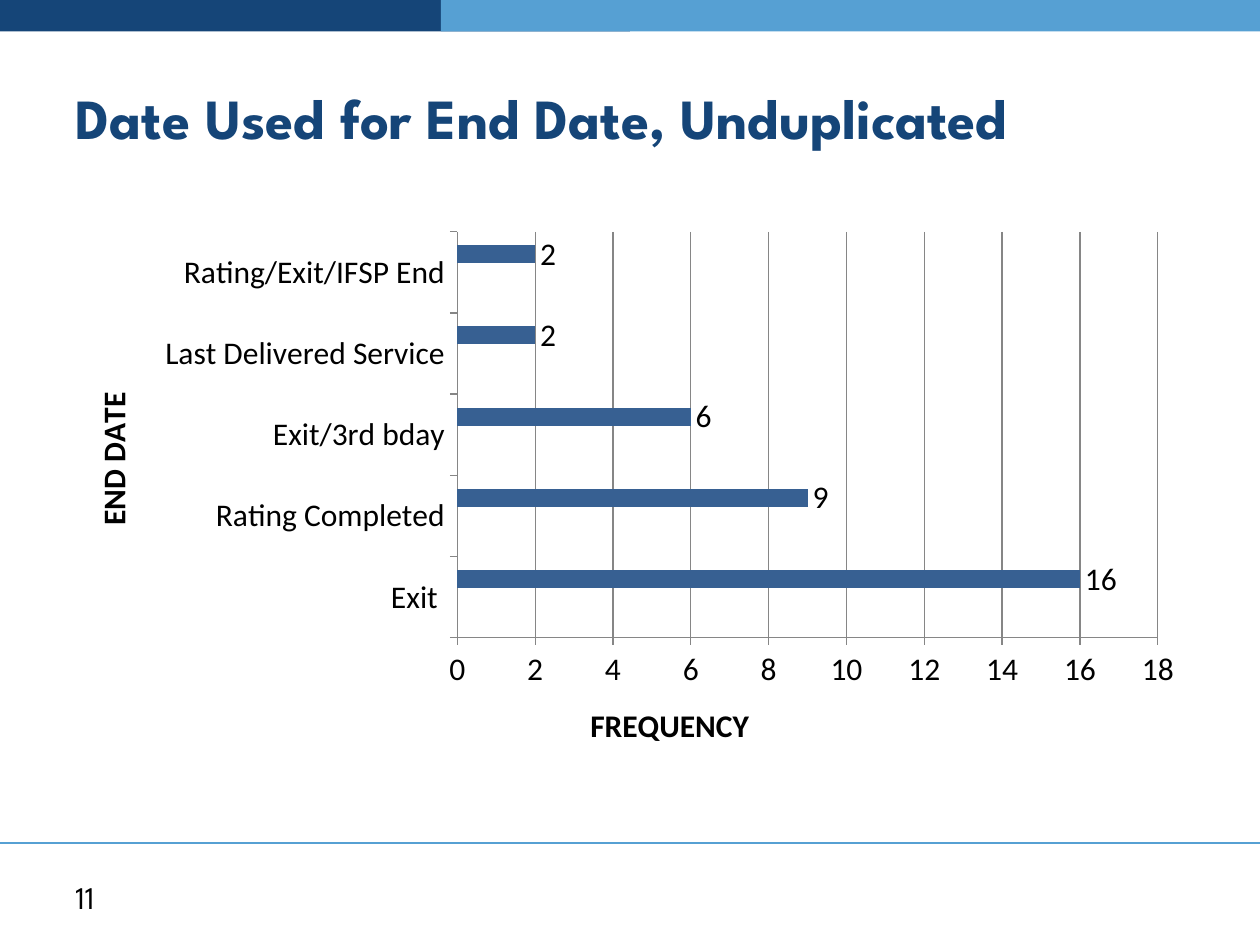
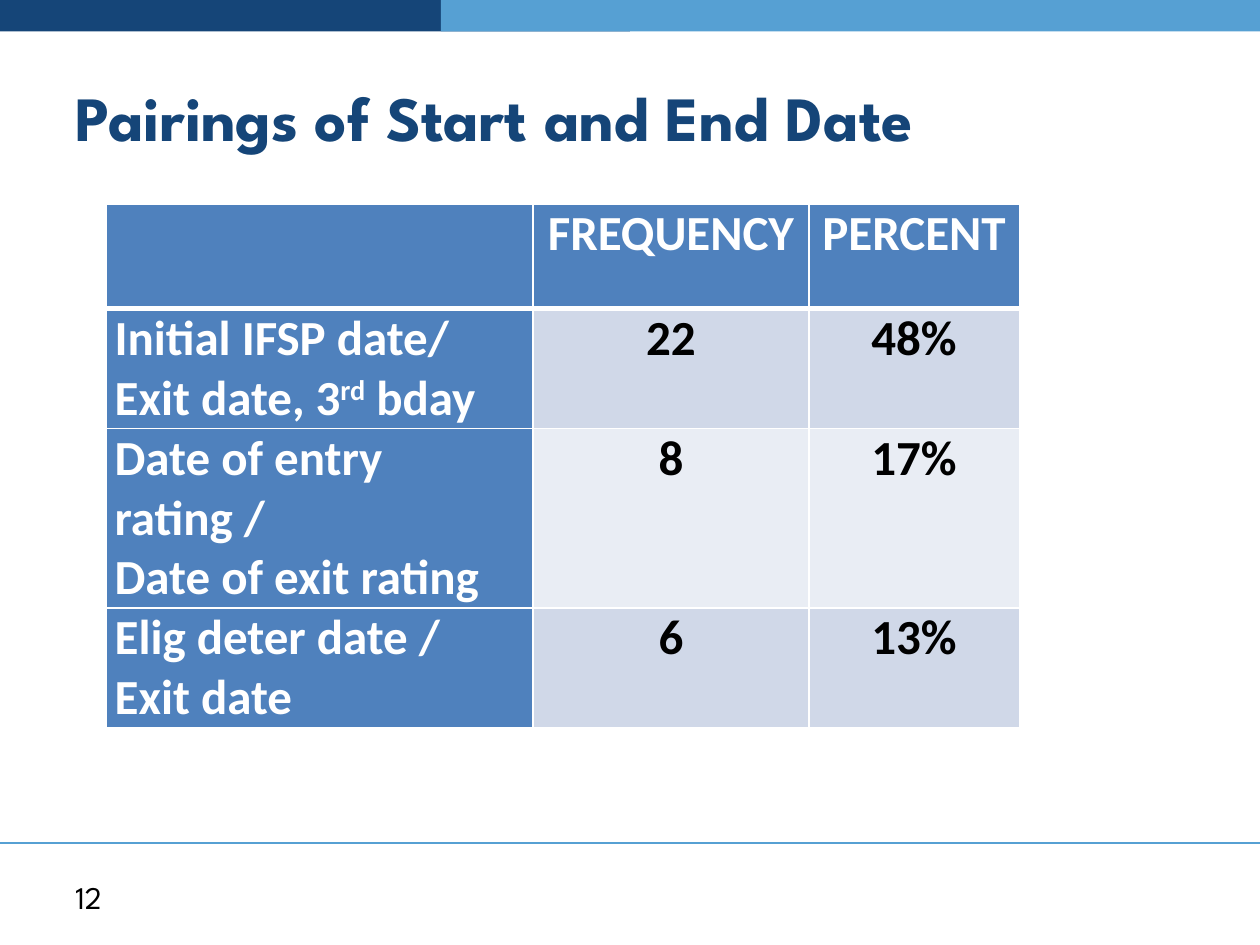
import dataclasses

import lxml.etree
import pptx
import pptx.chart.data
import pptx.dml.color
import pptx.enum.chart
import pptx.enum.shapes
import pptx.enum.text
import pptx.oxml.ns
import pptx.util

Inches = pptx.util.Inches
Pt = pptx.util.Pt
RGB = pptx.dml.color.RGBColor.from_string
qn = pptx.oxml.ns.qn
Align = pptx.enum.text.PP_ALIGN


@dataclasses.dataclass(frozen=True)
class Theme:
    navy: str = "154578"
    sky: str = "56A0D3"
    black: str = "000000"
    white: str = "FFFFFF"
    grid: str = "868686"
    header: str = "4F81BD"
    rows: tuple = ("D0D8E8", "E9EDF4")
    series: tuple = ("4F81BD", "C0504D", "376092")
    heading_font: str = "League Spartan"
    body_font: str = "Calibri"
    small: int = 18
    table: int = 28


theme = Theme()
chart_width, chart_height = 9, 4.42


def write_text(frame, text, *, size, color, font, bold=False, align=Align.LEFT):
    """Write one paragraph per line; text between ^ marks is superscript."""
    for index, line in enumerate(text.split("\n")):
        paragraph = frame.add_paragraph() if index else frame.paragraphs[0]
        paragraph.alignment = align
        for position, piece in enumerate(line.split("^")):
            run = paragraph.add_run()
            run.text = piece
            run.font.size = Pt(size)
            run.font.name = font
            run.font.bold = bold
            run.font.color.rgb = RGB(color)
            if position % 2:
                run.font._element.set("baseline", "30000")


def place_chart_part(element, index, **inches):
    """Fix a chart part's place, in inches from the chart's corner."""
    for old_layout in element.findall(qn("c:layout")):
        element.remove(old_layout)
    layout = lxml.etree.Element(qn("c:layout"))
    manual = lxml.etree.SubElement(layout, qn("c:manualLayout"))
    if "w" in inches:
        lxml.etree.SubElement(manual, qn("c:layoutTarget")).set("val", "inner")
    for mode in ("xMode", "yMode"):
        lxml.etree.SubElement(manual, qn(f"c:{mode}")).set("val", "edge")
    for name, value in inches.items():
        fraction = value / (chart_width if name in "xw" else chart_height)
        lxml.etree.SubElement(manual, qn(f"c:{name}")).set("val", str(fraction))
    element.insert(index, layout)


presentation = pptx.Presentation()
presentation.slide_width = Inches(10)
presentation.slide_height = Inches(7.5)

# Shared frame: bands, footer rule, page number and title
slides = []
for number, title, title_size in [
    (11, "Date Used for End Date, Unduplicated", 32.4),
    (12, "Pairings of Start and End Date", 36),
]:
    slide = presentation.slides.add_slide(presentation.slide_layouts[5])
    slides.append(slide)

    rule = slide.shapes.add_connector(
        pptx.enum.shapes.MSO_CONNECTOR.STRAIGHT,
        Inches(0), Inches(6.69), Inches(10), Inches(6.69))
    rule.line.color.rgb = RGB(theme.sky)
    rule.line.width = Pt(1.5)
    lxml.etree.SubElement(rule._element.spPr, qn("a:effectLst"))

    for left, width, color in [(0, 5, theme.navy), (3.5, 6.5, theme.sky)]:
        band = slide.shapes.add_shape(
            pptx.enum.shapes.MSO_SHAPE.RECTANGLE,
            Inches(left), Inches(-1.25), Inches(width), Inches(1.5))
        band.shadow.inherit = False
        band.fill.solid()
        band.fill.fore_color.rgb = RGB(color)
        band.line.fill.background()

    page_number = slide.shapes.add_textbox(
        Inches(0.5), Inches(6.92), Inches(2.33), Inches(0.4))
    heading = slide.shapes.title
    heading.left, heading.top = Inches(0.5), Inches(0.3)
    heading.width, heading.height = Inches(9), Inches(1.25)
    for shape in (page_number, heading):
        shape.text_frame.word_wrap = True
        shape.text_frame.auto_size = pptx.enum.text.MSO_AUTO_SIZE.NONE
        shape.text_frame.vertical_anchor = pptx.enum.text.MSO_ANCHOR.MIDDLE
    write_text(page_number.text_frame, str(number), size=theme.small,
               color=theme.black, font=theme.heading_font)
    write_text(heading.text_frame, title, size=title_size,
               color=theme.navy, font=theme.heading_font, bold=True)

chart_slide, table_slide = slides

# End date chart: the first two series hold no values
chart_data = pptx.chart.data.CategoryChartData()
chart_data.categories = ["Exit ", "Rating Completed", "Exit/3rd bday",
                         "Last Delivered Service", "Rating/Exit/IFSP End"]
chart_data.add_series("Series 1", [None] * 5)
chart_data.add_series("Series 2", [None] * 5)
chart_data.add_series("Series 3", [16, 9, 6, 2, 2])
chart = chart_slide.shapes.add_chart(
    pptx.enum.chart.XL_CHART_TYPE.BAR_CLUSTERED, Inches(0.5), Inches(1.75),
    Inches(chart_width), Inches(chart_height), chart_data).chart
chart.has_legend = False
chart.has_title = False
chart.font.name = theme.body_font
chart.font.size = Pt(10)
chart.font.color.rgb = RGB(theme.black)

plot = chart.plots[0]
plot.vary_by_categories = False
plot.gap_width = 150
plot.overlap = 0
for series, color in zip(plot.series, theme.series):
    series.format.fill.solid()
    series.format.fill.fore_color.rgb = RGB(color)
labels = plot.series[2].data_labels
labels.show_value = True
labels.position = pptx.enum.chart.XL_LABEL_POSITION.OUTSIDE_END
labels.font.size = Pt(theme.small)

# Chart axes
for axis, axis_title, x, y in [
    (chart.category_axis, "END DATE", 0.18, 1.32),
    (chart.value_axis, "FREQUENCY", 4.14, 3.79),
]:
    axis.major_tick_mark = pptx.enum.chart.XL_TICK_MARK.OUTSIDE
    axis.tick_labels.font.size = Pt(theme.small)
    axis.format.line.color.rgb = RGB(theme.grid)
    write_text(axis.axis_title.text_frame, axis_title, size=theme.small,
               color=theme.black, font=theme.body_font, bold=True,
               align=Align.CENTER)
    place_chart_part(axis.axis_title._element, 1, x=x, y=y)
vertical_title = chart.category_axis.axis_title.text_frame
vertical_title._txBody.bodyPr.set("rot", "-5400000")
vertical_title._txBody.bodyPr.set("vert", "horz")
chart.value_axis.minimum_scale = 0
chart.value_axis.maximum_scale = 18
chart.value_axis.major_unit = 2
chart.value_axis.has_major_gridlines = True
chart.value_axis.major_gridlines.format.line.color.rgb = RGB(theme.grid)
place_chart_part(chart._chartSpace.chart.plotArea, 0,
                 x=3.13, y=0.09, w=5.56, h=3.22)

# Pairings table
table_rows = [
    ("", "FREQUENCY", "PERCENT"),
    ("Initial IFSP date/\nExit date, 3^rd^ bday", "22", "48%"),
    ("Date of entry rating /\nDate of exit rating", "8", "17%"),
    ("Elig deter date /\nExit date", "6", "13%"),
]
table = table_slide.shapes.add_table(
    len(table_rows), 3, Inches(0.84), Inches(1.62),
    Inches(7.25), Inches(3.32)).table
for column, width in zip(table.columns, (3.39, 2.19, 1.67)):
    column.width = Inches(width)
for row_index, row in enumerate(table_rows):
    table.rows[row_index].height = Inches(0.83)
    for column_index, text in enumerate(row):
        cell = table.cell(row_index, column_index)
        cell.margin_left = cell.margin_right = Inches(0.07)
        cell.margin_top = cell.margin_bottom = 0
        is_header = row_index == 0 or column_index == 0

        # White borders, thicker under the header row
        properties = cell._tc.get_or_add_tcPr()
        for side in "LRTB":
            under_header = (row_index, side) in [(0, "B"), (1, "T")]
            border = lxml.etree.SubElement(properties, qn(f"a:ln{side}"))
            border.set("w", str(Pt(3 if under_header else 1)))
            fill = lxml.etree.SubElement(border, qn("a:solidFill"))
            lxml.etree.SubElement(fill, qn("a:srgbClr")).set("val", theme.white)

        cell.fill.solid()
        cell.fill.fore_color.rgb = RGB(
            theme.header if is_header else theme.rows[(row_index - 1) % 2])
        if text:
            write_text(cell.text_frame, text, size=theme.table,
                       color=theme.white if is_header else theme.black,
                       font=theme.body_font, bold=True,
                       align=Align.CENTER if column_index else Align.LEFT)

presentation.save("out.pptx")
